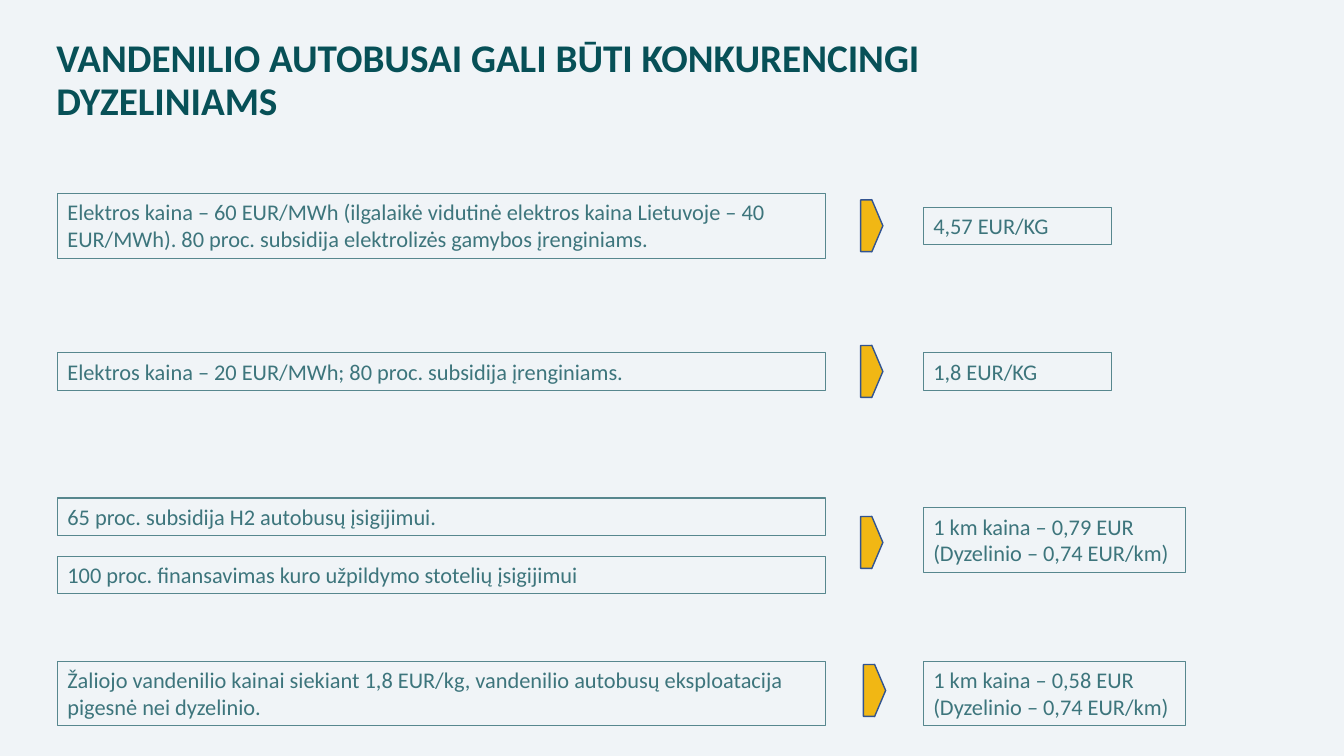
from dataclasses import dataclass

from pptx import Presentation
from pptx.dml.color import RGBColor
from pptx.enum.shapes import MSO_SHAPE
from pptx.enum.text import MSO_ANCHOR, MSO_AUTO_SIZE
from pptx.util import Cm, Pt

ARROW = MSO_SHAPE.RIGHT_ARROW
MIDDLE = MSO_ANCHOR.MIDDLE
GROW = MSO_AUTO_SIZE.SHAPE_TO_FIT_TEXT


@dataclass(frozen=True)
class Theme:
    font: str = "Calibri"
    back: str = "F0F4F7"
    title: str = "075057"
    text: str = "3D757C"
    frame: str = "57878E"
    arrow: str = "F1B714"
    edge: str = "325491"
    title_size: int = 28
    text_size: int = 16


THEME = Theme()

# Horizontal layout and box heights by number of lines, in cm
CAUSE_X, CAUSE_W = 1.45, 19.35
ARROW_X, ARROW_W, ARROW_H = 21.69, 0.56, 1.32
COST_X, PRICE_W, KM_W = 23.27, 4.75, 6.6
HEIGHT = {1: 0.94, 2: 1.63}

# Boxes: middle, lines, text
CAUSES = [
    (5.69, 2, "Elektros kaina – 60 EUR/MWh (ilgalaikė vidutinė elektros kaina "
              "Lietuvoje – 40 EUR/MWh). 80 proc. subsidija elektrolizės "
              "gamybos įrenginiams."),
    (9.36, 1, "Elektros kaina – 20 EUR/MWh; 80 proc. subsidija įrenginiams."),
    (13.02, 1, "65 proc. subsidija H2 autobusų įsigijimui."),
    (14.49, 1, "100 proc. finansavimas kuro užpildymo stotelių įsigijimui"),
    (17.48, 2, "Žaliojo vandenilio kainai siekiant 1,8 EUR/kg, vandenilio "
               "autobusų eksploatacija pigesnė nei dyzelinio."),
]
PRICES = [(5.69, 1, "4,57 EUR/KG"), (9.36, 1, "1,8 EUR/KG")]
KM_COSTS = [
    (13.61, 2, "1 km kaina – 0,79 EUR (Dyzelinio – 0,74 EUR/km)"),
    (17.48, 2, "1 km kaina – 0,58 EUR (Dyzelinio – 0,74 EUR/km)"),
]
# Arrows: left, middle
ARROWS = [(ARROW_X, 5.69), (ARROW_X, 9.36), (ARROW_X, 13.67),
          (ARROW_X + 0.07, 17.4)]


def color(code):
    return RGBColor.from_string(code)


def add_text(slide, text, x, y, w, h, size, tint, bold=False):
    box = slide.shapes.add_textbox(Cm(x), Cm(y), Cm(w), Cm(h))
    box.text_frame.word_wrap = True
    par = box.text_frame.paragraphs[0]
    par.text = text
    par.font.name = THEME.font
    par.font.size = Pt(size)
    par.font.bold = bold
    par.font.color.rgb = color(tint)
    return box


def add_title(slide, text):
    box = add_text(slide, text, 1.17, 0.76, 25.55, 2.57,
                   THEME.title_size, THEME.title, True)
    box.text_frame.vertical_anchor = MIDDLE
    box.text_frame.paragraphs[0].line_spacing = 0.9


def add_boxes(slide, items, x, w):
    """Draw framed texts, each centred on its own height."""
    for mid, lines, text in items:
        h = HEIGHT[lines]
        box = add_text(slide, text, x, mid - h / 2, w, h,
                       THEME.text_size, THEME.text)
        box.text_frame.auto_size = GROW
        box.line.color.rgb = color(THEME.frame)
        box.line.width = Pt(0.75)


def add_arrow(slide, x, mid):
    arrow = slide.shapes.add_shape(ARROW, Cm(x), Cm(mid - ARROW_H / 2),
                                   Cm(ARROW_W), Cm(ARROW_H))
    arrow.adjustments[0] = 0.99
    arrow.adjustments[1] = 0.5
    arrow.shadow.inherit = False
    arrow.fill.solid()
    arrow.fill.fore_color.rgb = color(THEME.arrow)
    arrow.line.color.rgb = color(THEME.edge)
    arrow.line.width = Pt(1)


def main():
    deck = Presentation()
    deck.slide_width, deck.slide_height = Cm(33.87), Cm(19.05)
    slide = deck.slides.add_slide(deck.slide_layouts[6])
    slide.background.fill.solid()
    slide.background.fill.fore_color.rgb = color(THEME.back)
    add_title(slide, "VANDENILIO AUTOBUSAI GALI BŪTI KONKURENCINGI DYZELINIAMS")
    add_boxes(slide, CAUSES, CAUSE_X, CAUSE_W)
    add_boxes(slide, PRICES, COST_X, PRICE_W)
    add_boxes(slide, KM_COSTS, COST_X, KM_W)
    for x, mid in ARROWS:
        add_arrow(slide, x, mid)
    deck.save("out.pptx")


if __name__ == "__main__":
    main()
